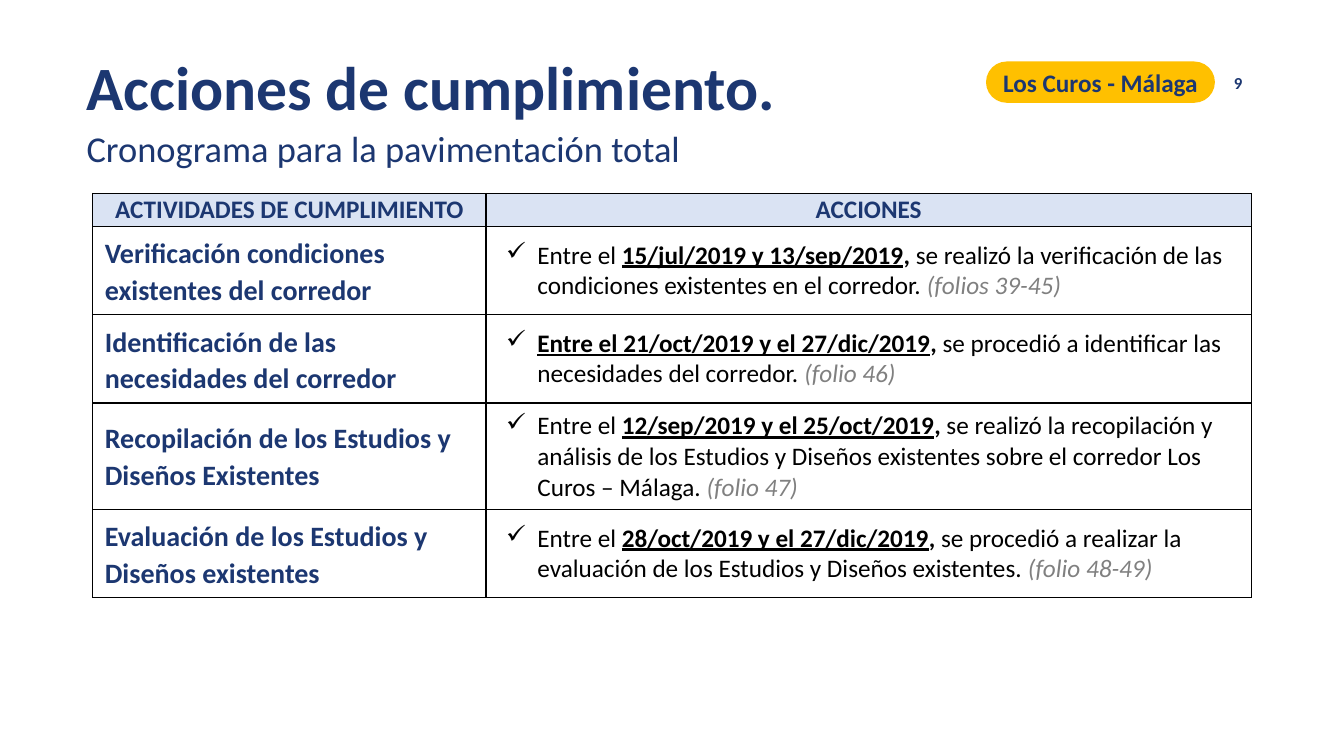
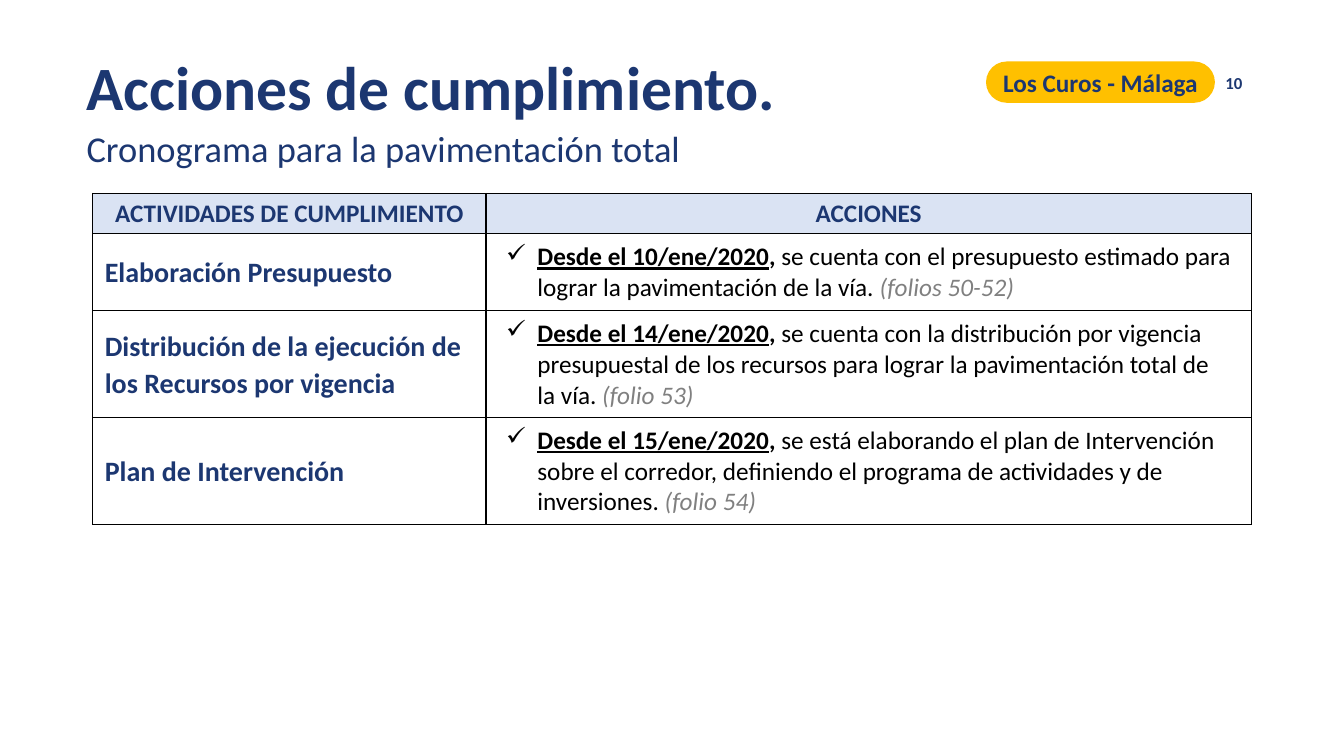
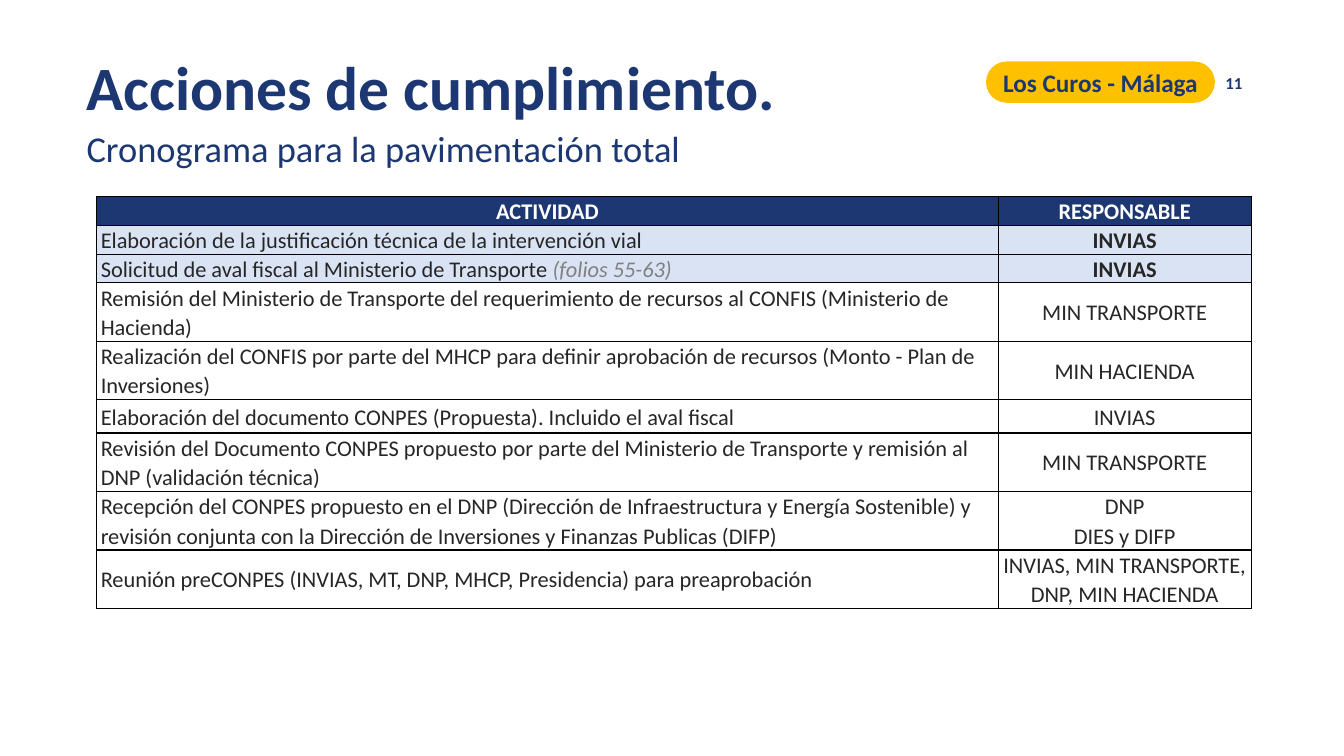
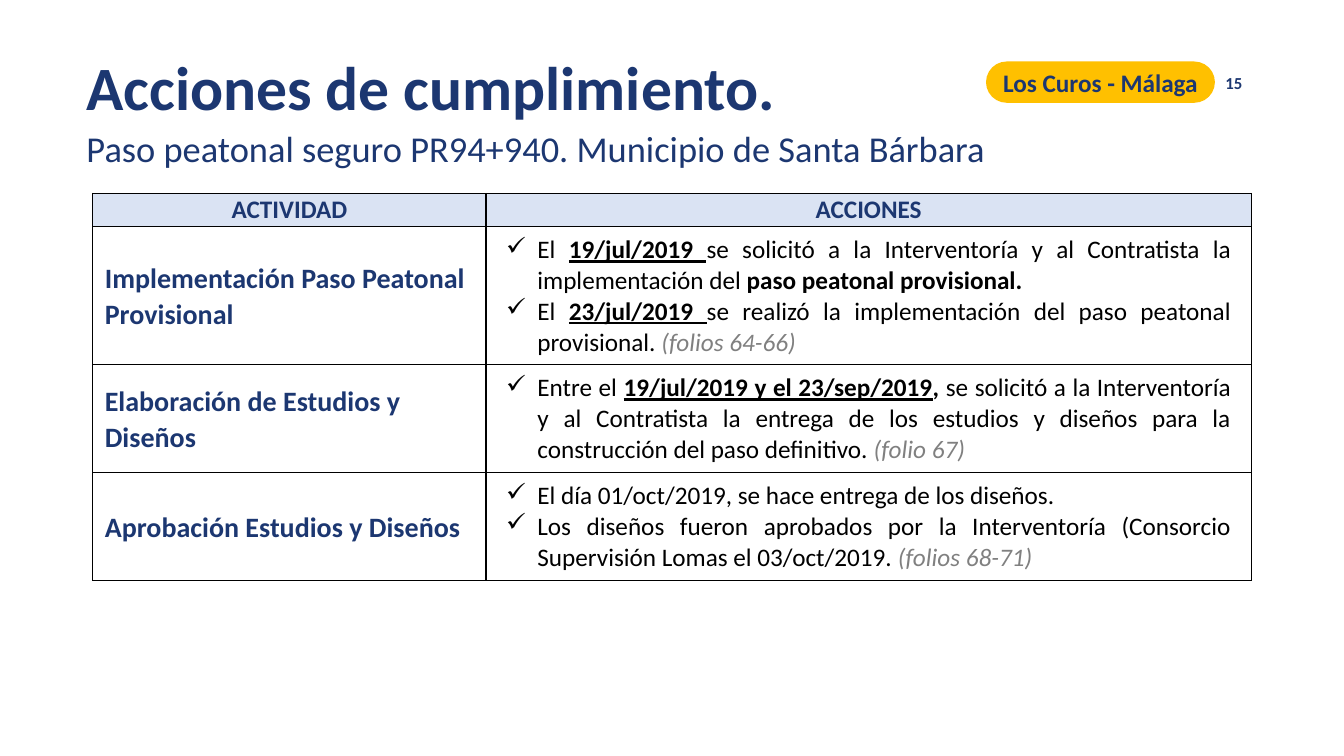
"""Build four slides on the compliance actions for the Los Curos - Málaga road."""
from lxml.etree import SubElement
from pptx import Presentation
from pptx.dml.color import RGBColor
from pptx.enum.shapes import MSO_SHAPE
from pptx.enum.text import MSO_ANCHOR, MSO_AUTO_SIZE, PP_ALIGN
from pptx.oxml import parse_xml
from pptx.oxml.ns import nsdecls, qn
from pptx.util import Inches, Pt

FONT = "Calibri"
COLORS = {
    "navy": "1C3771",
    "amber": "FFC000",
    "pale": "DAE3F3",
    "black": "000000",
    "ink": "262626",
    "gray": "808080",
    "white": "FFFFFF",
}
STYLES = {
    "title": (44, "navy", "b"),
    "subtitle": (26, "navy", ""),
    "label": (18, "navy", "b"),
    "page": (12, "navy", "b"),
    "activity": (20, "navy", "b"),
    "plain": (18, "black", ""),
    "bold": (18, "black", "b"),
    "date": (18, "black", "bu"),
    "folio": (18, "gray", "i"),
    "head": (16, "white", "b"),
    "task": (16, "ink", ""),
    "owner": (16, "ink", "b"),
    "task folio": (16, "gray", "i"),
}
LEFT, CENTER, RIGHT, JUSTIFY = PP_ALIGN.LEFT, PP_ALIGN.CENTER, PP_ALIGN.RIGHT, PP_ALIGN.JUSTIFY


def write(frame, paragraphs, align=LEFT, spacing=None, bullet=None):
    for index, runs in enumerate(paragraphs):
        paragraph = frame.paragraphs[0] if index == 0 else frame.add_paragraph()
        paragraph.alignment = align
        paragraph.line_spacing = spacing
        if bullet:
            properties = paragraph._p.get_or_add_pPr()
            properties.set("marL", str(Inches(0.31)))
            properties.set("indent", str(Inches(-0.31)))
            SubElement(properties, qn("a:buChar")).set("char", bullet)
        for text, style in runs:
            size, color, marks = STYLES[style]
            run = paragraph.add_run()
            run.text = text
            run.font.name = FONT
            run.font.size = Pt(size)
            run.font.color.rgb = RGBColor.from_string(COLORS[color])
            run.font.bold = "b" in marks
            run.font.italic = "i" in marks
            run.font.underline = "u" in marks


def fill_cell(cell, paragraphs, margins, fill=None, **layout):
    cell.margin_left, cell.margin_top, cell.margin_right, cell.margin_bottom = map(Inches, margins)
    cell.vertical_anchor = MSO_ANCHOR.MIDDLE
    if fill:
        cell.fill.solid()
        cell.fill.fore_color.rgb = RGBColor.from_string(COLORS[fill])
    else:
        cell.fill.background()
    for position, side in enumerate(("lnL", "lnR", "lnT", "lnB")):
        border = parse_xml(
            f'<a:{side} {nsdecls("a")} w="{Pt(1)}"><a:solidFill>'
            f'<a:srgbClr val="{COLORS["black"]}"/></a:solidFill></a:{side}>'
        )
        cell._tc.get_or_add_tcPr().insert(position, border)
    write(cell.text_frame, paragraphs, **layout)


deck = Presentation()
deck.slide_width, deck.slide_height = Inches(13.33), Inches(7.5)

PAVING = "Cronograma para la pavimentación total"
CROSSING = "Paso peatonal seguro PR94+940. Municipio de Santa Bárbara"
slides = {}
for page, subtitle, width in ((9, PAVING, 9.02), (10, PAVING, 9.02), (11, PAVING, 9.02), (15, CROSSING, 9.23)):
    slide = slides[page] = deck.slides.add_slide(deck.slide_layouts[6])

    heading = slide.shapes.add_textbox(Inches(0.76), Inches(0.39), Inches(width), Inches(1.34)).text_frame
    heading.word_wrap = True
    heading.auto_size = MSO_AUTO_SIZE.SHAPE_TO_FIT_TEXT
    write(heading, [[("Acciones de cumplimiento.", "title")], [(subtitle, "subtitle")]], spacing=1.07)

    corridor = slide.shapes.add_shape(
        MSO_SHAPE.ROUNDED_RECTANGLE, Inches(9.78), Inches(0.61), Inches(2.27), Inches(0.41)
    )
    corridor.adjustments[0] = 0.5
    corridor.shadow.inherit = False
    corridor.fill.solid()
    corridor.fill.fore_color.rgb = RGBColor.from_string(COLORS["amber"])
    corridor.line.fill.background()
    corridor.text_frame.vertical_anchor = MSO_ANCHOR.MIDDLE
    write(corridor.text_frame, [[("Los Curos - Málaga", "label")]], CENTER)

    number = slide.shapes.add_textbox(Inches(9.42), Inches(0.62), Inches(3), Inches(0.4)).text_frame
    number.word_wrap = True
    number.vertical_anchor = MSO_ANCHOR.MIDDLE
    write(number, [[(str(page), "page")]], RIGHT)

schedules = [
    (9, "ACTIVIDADES DE CUMPLIMIENTO", LEFT, (0.33, 0.87, 0.87, 1.06, 0.87), [
        ("Verificación condiciones existentes del corredor", [[
            ("Entre el ", "plain"),
            ("15/jul/2019 y 13/sep/2019", "date"),
            (", ", "bold"),
            ("se realizó la verificación de las condiciones existentes en el corredor. ", "plain"),
            ("(folios 39-45)", "folio"),
        ]]),
        ("Identificación de las necesidades del corredor", [[
            ("Entre el 21/oct/2019 y el 27/dic/2019", "date"),
            (",", "bold"),
            (" se procedió a identificar las necesidades del corredor. ", "plain"),
            ("(folio 46)", "folio"),
        ]]),
        ("Recopilación de los Estudios y Diseños Existentes", [[
            ("Entre el ", "plain"),
            ("12/sep/2019 y el 25/oct/2019", "date"),
            (",", "bold"),
            (" se realizó la recopilación y análisis de los Estudios y Diseños existentes "
             "sobre el corredor Los Curos – Málaga. ", "plain"),
            ("(folio 47)", "folio"),
        ]]),
        ("Evaluación de los Estudios y Diseños existentes", [[
            ("Entre el ", "plain"),
            ("28/oct/2019 y el 27/dic/2019", "date"),
            (",", "bold"),
            (" se procedió a realizar la evaluación de los Estudios y Diseños existentes. ", "plain"),
            ("(folio 48-49)", "folio"),
        ]]),
    ]),
    (10, "ACTIVIDADES DE CUMPLIMIENTO", LEFT, (0.4, 0.75, 1.06, 1.06), [
        ("Elaboración Presupuesto", [[
            ("Desde el 10/ene/2020", "date"),
            (",", "bold"),
            (" se cuenta con el presupuesto estimado para lograr la pavimentación de la vía. ", "plain"),
            ("(folios 50-52)", "folio"),
        ]]),
        ("Distribución de la ejecución de los Recursos por vigencia", [[
            ("Desde el 14/ene/2020", "date"),
            (", ", "bold"),
            ("se cuenta con la distribución por vigencia presupuestal de los recursos "
             "para lograr la pavimentación total de la vía.", "plain"),
            (" (folio 53)", "folio"),
        ]]),
        ("Plan de Intervención", [[
            ("Desde el 15/ene/2020", "date"),
            (",", "bold"),
            (" se está elaborando el plan de Intervención sobre el corredor, "
             "definiendo el programa de actividades y de inversiones. ", "plain"),
            ("(folio 54)", "folio"),
        ]]),
    ]),
    (15, "ACTIVIDAD", JUSTIFY, (0.33, 1.37, 1.07, 1.07), [
        ("Implementación Paso Peatonal Provisional", [[
            ("El ", "plain"),
            ("19/jul/2019 ", "date"),
            ("se solicitó a la Interventoría y al Contratista la implementación del ", "plain"),
            ("paso peatonal provisional.", "bold"),
        ], [
            ("El ", "plain"),
            ("23/jul/2019 ", "date"),
            ("se realizó la implementación del paso peatonal provisional. ", "plain"),
            ("(folios 64-66)", "folio"),
        ]]),
        ("Elaboración de Estudios y Diseños", [[
            ("Entre el ", "plain"),
            ("19/jul/2019 y el 23/sep/2019", "date"),
            (",", "bold"),
            (" se solicitó a la Interventoría y al Contratista la entrega de los estudios y diseños "
             "para la construcción del paso definitivo. ", "plain"),
            ("(folio 67)", "folio"),
        ]]),
        ("Aprobación Estudios y Diseños", [[
            ("El día 01/oct/2019, se hace entrega de los diseños.", "plain"),
        ], [
            ("Los diseños fueron aprobados por la Interventoría "
             "(Consorcio Supervisión Lomas el 03/oct/2019. ", "plain"),
            ("(folios 68-71)", "folio"),
        ]]),
    ]),
]
for page, activity_heading, align, heights, activities in schedules:
    schedule = slides[page].shapes.add_table(
        len(heights), 2, Inches(0.92), Inches(1.92), Inches(11.49), Inches(sum(heights))
    ).table
    schedule.first_row = schedule.horz_banding = False
    for column, width in zip(schedule.columns, (3.9, 7.59)):
        column.width = Inches(width)
    for row, height in zip(schedule.rows, heights):
        row.height = Inches(height)
    for column, text in enumerate((activity_heading, "ACCIONES")):
        fill_cell(schedule.cell(0, column), [[(text, "label")]], (0, 0, 0, 0), "pale", align=CENTER)
    for row, (activity, actions) in enumerate(activities, 1):
        fill_cell(schedule.cell(row, 0), [[(activity, "activity")]], (0.12, 0.08, 0.2, 0.08), spacing=1.07)
        fill_cell(schedule.cell(row, 1), actions, (0.2, 0.08, 0.2, 0.08), align=align, bullet="✓")

steps = [
    (0.28, "navy", [("ACTIVIDAD", "head")], ["RESPONSABLE"], "head"),
    (0.28, "pale", [("Elaboración de la justificación técnica de la intervención vial", "task")],
     ["INVIAS"], "owner"),
    (0.28, "pale", [("Solicitud de aval fiscal al Ministerio de Transporte ", "task"),
                    ("(folios 55-63)", "task folio")], ["INVIAS"], "owner"),
    (0.58, None, [("Remisión del Ministerio de Transporte del requerimiento de recursos al CONFIS "
                   "(Ministerio de Hacienda)", "task")], ["MIN TRANSPORTE"], "task"),
    (0.58, None, [("Realización del CONFIS por parte del MHCP para definir aprobación de recursos "
                   "(Monto - Plan de Inversiones)", "task")], ["MIN HACIENDA"], "task"),
    (0.33, None, [("Elaboración del documento CONPES (Propuesta). Incluido el aval fiscal", "task")],
     ["INVIAS"], "task"),
    (0.58, None, [("Revisión del Documento CONPES propuesto por parte del Ministerio de Transporte "
                   "y remisión al DNP (validación técnica)", "task")], ["MIN TRANSPORTE"], "task"),
    (0.58, None, [("Recepción del CONPES propuesto en el DNP (Dirección de Infraestructura y Energía "
                   "Sostenible) y revisión conjunta con la Dirección de Inversiones y Finanzas Publicas "
                   "(DIFP)", "task")], ["DNP", "DIES y DIFP"], "task"),
    (0.58, None, [("Reunión preCONPES (INVIAS, MT, DNP, MHCP, Presidencia) para preaprobación", "task")],
     ["INVIAS, MIN TRANSPORTE, DNP, MIN HACIENDA"], "task"),
]
approvals = slides[11].shapes.add_table(
    len(steps), 2, Inches(0.96), Inches(1.95), Inches(11.45), Inches(sum(step[0] for step in steps))
).table
approvals.first_row = approvals.horz_banding = False
for column, width in zip(approvals.columns, (8.94, 2.51)):
    column.width = Inches(width)
for row, (height, fill, task, owners, owner_style) in enumerate(steps):
    approvals.rows[row].height = Inches(height)
    fill_cell(approvals.cell(row, 0), [task], (0.04, 0, 0.04, 0), fill,
              align=CENTER if row == 0 else LEFT, spacing=1.07)
    fill_cell(approvals.cell(row, 1), [[(owner, owner_style)] for owner in owners],
              (0.04, 0, 0.04, 0), fill, align=CENTER, spacing=1.07)

deck.save("out.pptx")
